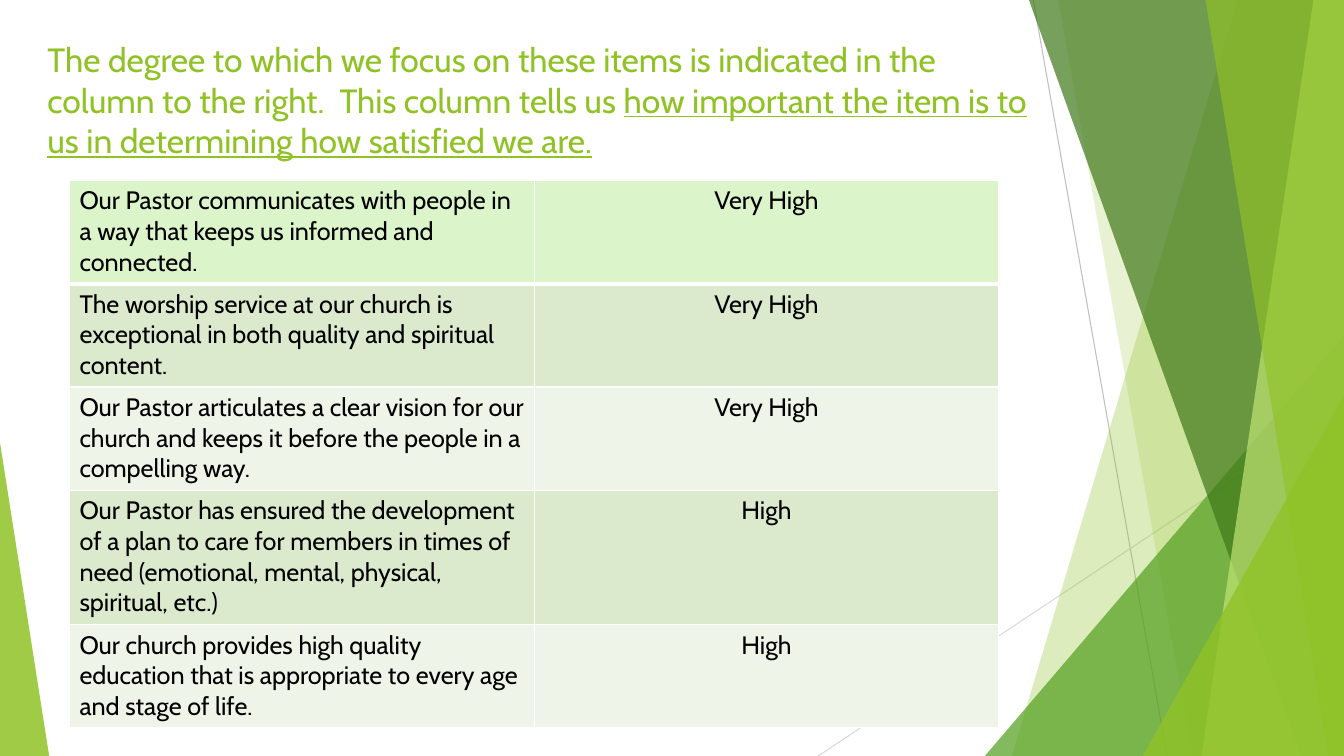
from lxml.etree import SubElement
from pptx import Presentation
from pptx.dml.color import RGBColor
from pptx.enum.shapes import MSO_CONNECTOR, MSO_SHAPE
from pptx.enum.text import MSO_ANCHOR, MSO_AUTO_SIZE, PP_ALIGN
from pptx.oxml.ns import qn
from pptx.util import Cm, Pt

STRAIGHT = MSO_CONNECTOR.STRAIGHT
TRIANGLE = MSO_SHAPE.ISOSCELES_TRIANGLE
TOP = MSO_ANCHOR.TOP
NO_FIT = MSO_AUTO_SIZE.NONE
LEFT, CENTER = PP_ALIGN.LEFT, PP_ALIGN.CENTER

WIDTH, HEIGHT = 33.87, 19.05
HUES = {
    "lime": "90C226", "leaf": "54A021", "moss": "3F7819", "pale": "C0E474",
    "gray": "BFBFBF", "mist": "D9D9D9", "white": "FFFFFF", "black": "000000",
    "mint": "DBF4CA", "sage": "DBE9CD", "frost": "EEF4E8",
}
TITLE = [
    ("The degree to which we focus on these items is indicated in the column "
     "to the right.  This column tells us ", False),
    ("how important the item is to us in determining how satisfied we are.", True),
]
ITEMS = [
    ("Our Pastor communicates with people in a way that keeps us informed and "
     "connected.", "Very High", 2.6),
    ("The worship service at our church is exceptional in both quality and "
     "spiritual content.", "Very High", 2.6),
    ("Our Pastor articulates a clear vision for our church and keeps it before "
     "the people in a compelling way.", "Very High", 2.6),
    ("Our Pastor has ensured the development of a plan to care for members in "
     "times of need (emotional, mental, physical, spiritual, etc.)", "High", 3.39),
    ("Our church provides high quality education that is appropriate to every "
     "age and stage of life.", "High", 2.6),
]


class Deck:
    """Hold the style and the current slide."""

    def __init__(self):
        self.prs = Presentation()
        self.prs.slide_width, self.prs.slide_height = Cm(WIDTH), Cm(HEIGHT)
        self.slide = self.prs.slides.add_slide(self.prs.slide_layouts[5])
        self.shapes = self.slide.shapes

    def hue(self, name):
        return RGBColor.from_string(HUES[name])

    def apply(self, target, style):
        for key, value in style.items():
            setattr(target, key, value)

    def text(self, para, words, size, color, line=False):
        run = para.add_run()
        run.text = words
        self.apply(run.font, {"name": "Cabin", "size": Pt(size),
                              "bold": False, "underline": line})
        run.font.color.rgb = self.hue(color)

    def paint(self, shape, color, alpha):
        shape.shadow.inherit = False
        shape.fill.solid()
        shape.fill.fore_color.rgb = self.hue(color)
        shape.line.fill.background()
        tint = next(shape.element.spPr.iter(qn("a:srgbClr")))
        SubElement(tint, qn("a:alpha"), val=str(alpha * 1000))

    def line(self, start, end, color):
        link = self.shapes.add_connector(STRAIGHT, *map(Cm, start + end))
        link.line.color.rgb = self.hue(color)
        link.line.width = Pt(0.75)
        SubElement(link.element.spPr, qn("a:effectLst"))

    def pane(self, top, base, color, alpha):
        pen = self.shapes.build_freeform(Cm(top), 0)
        spots = [(WIDTH, 0), (WIDTH, HEIGHT), (base, HEIGHT)]
        pen.add_line_segments([(Cm(x), Cm(y)) for x, y in spots])
        self.paint(pen.convert_to_shape(), color, alpha)

    def peak(self, left, top, width, tip, color, alpha):
        box = map(Cm, (left, top, width, HEIGHT - top))
        shape = self.shapes.add_shape(TRIANGLE, *box)
        shape.adjustments[0] = tip
        self.paint(shape, color, alpha)

    def title(self, parts):
        head = self.shapes.title
        self.apply(head, {"left": Cm(0.94), "top": Cm(0.86),
                          "width": Cm(25.48), "height": Cm(3.66)})
        self.apply(head.text_frame, {"word_wrap": True, "auto_size": NO_FIT,
                                     "vertical_anchor": TOP})
        para = head.text_frame.paragraphs[0]
        para.alignment = LEFT
        for words, line in parts:
            self.text(para, words, 24, "lime", line)

    def edge(self, cell, side, width):
        props = cell._tc.get_or_add_tcPr()
        rule = SubElement(props, qn(f"a:ln{side}"), w=str(Pt(width)))
        fill = SubElement(rule, qn("a:solidFill"))
        SubElement(fill, qn("a:srgbClr"), val=HUES["white"])

    def cell(self, cell, words, align, color, edges):
        for side, width in edges.items():
            self.edge(cell, side, width)
        cell.fill.solid()
        cell.fill.fore_color.rgb = self.hue(color)
        para = cell.text_frame.paragraphs[0]
        para.alignment = align
        self.text(para, words, 18, "black")

    def table(self, items):
        box = map(Cm, (1.75, 4.55, 23.42, sum(item[2] for item in items)))
        grid = self.shapes.add_table(len(items), 2, *box).table
        self.apply(grid, {"first_row": False, "horz_banding": False})
        for col in grid.columns:
            col.width = Cm(11.71)
        for i, (words, level, height) in enumerate(items):
            grid.rows[i].height = Cm(height)
            color = "mint" if i == 0 else ("frost", "sage")[i % 2]
            edges = {"L": 1, "R": 1, "T": 3 if i == 1 else 1,
                     "B": 3 if i == 0 else 1}
            self.cell(grid.cell(i, 0), words, LEFT, color, edges)
            self.cell(grid.cell(i, 1), level, CENTER, color, edges)


def main():
    deck = Deck()
    deck.line((26.04, 0), (29.41, HEIGHT), "gray")
    deck.line((WIDTH, 10.24), (20.62, HEIGHT), "mist")
    deck.pane(31.19, 25.5, "lime", 30)
    deck.pane(26.67, 30.05, "lime", 20)
    deck.peak(24.82, 8.46, 9.05, 1, "leaf", 72)
    deck.pane(25.93, 32.79, "moss", 70)
    deck.pane(33.1, 30.28, "pale", 70)
    deck.pane(30.38, 33.48, "lime", 65)
    deck.peak(28.8, 9.98, 5.07, 1, "lime", 80)
    deck.peak(0, 11.15, 1.24, 0, "lime", 85)
    deck.title(TITLE)
    deck.table(ITEMS)
    deck.prs.save("out.pptx")


if __name__ == "__main__":
    main()
